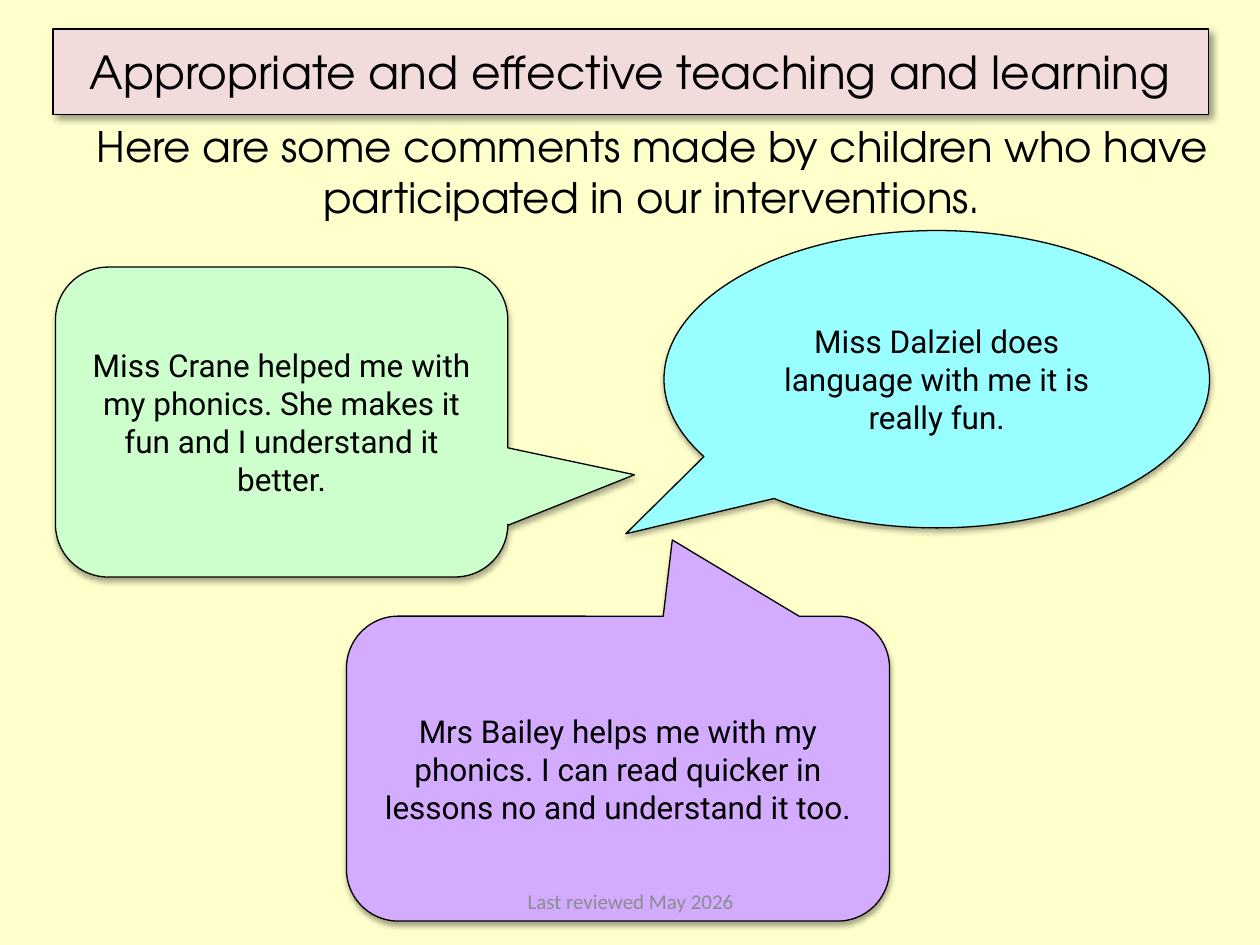
from lxml.etree import SubElement
from pptx import Presentation
from pptx.dml.color import RGBColor
from pptx.enum.shapes import MSO_SHAPE as Shape
from pptx.enum.text import MSO_ANCHOR as Anchor, MSO_AUTO_SIZE as AutoSize, PP_ALIGN as Align
from pptx.oxml.ns import qn
from pptx.util import Inches, Pt

COLORS = {
    "page": "FFFFCC", "title": "F2DCDB", "ink": "000000", "footer": "8C8C8C",
    "cyan": "98FEFF", "green": "CCFFCC", "purple": "D3ABFF",
}
HEADING_FONT = "TeX Gyre Adventor"
SPEECH_FONT = "Roboto"

# text, preset, position and size, adjustments, colour
COMMENTS = [
    ("Miss Dalziel does language with me it is really fun.",
     Shape.OVAL_CALLOUT, (5.27, 1.83, 4.33, 2.36), (-0.57, 0.52), "cyan"),
    ("Miss Crane helped me with my phonics. She makes it fun and I understand it better.",
     Shape.ROUNDED_RECTANGULAR_CALLOUT, (0.44, 2.12, 3.59, 2.46), (0.78, 0.17, 0.17), "green"),
    ("Mrs Bailey helps me with my phonics. I can read quicker in lessons no and understand it too.",
     Shape.ROUNDED_RECTANGULAR_CALLOUT, (2.75, 4.89, 4.31, 2.42), (0.1, -0.75, 0.17), "purple"),
]


def color(name):
    return RGBColor.from_string(COLORS[name])


def write(shape, text, size, font, ink="ink", anchor=Anchor.MIDDLE):
    frame = shape.text_frame
    frame.word_wrap = True
    frame.auto_size = AutoSize.NONE
    frame.vertical_anchor = anchor
    para = frame.paragraphs[0]
    para.alignment = Align.CENTER
    span = para.add_run()
    span.text = text
    span.font.size = Pt(size)
    span.font.name = font
    span.font.color.rgb = color(ink)


def add_shadow(shape, opacity, blur, distance, angle):
    effects = SubElement(shape.element.spPr, qn("a:effectLst"))
    shadow = SubElement(effects, qn("a:outerShdw"), blurRad=str(Pt(blur)),
                        dist=str(Pt(distance)), dir=str(angle * 60000), rotWithShape="0")
    tint = SubElement(shadow, qn("a:srgbClr"), val=COLORS["ink"])
    SubElement(tint, qn("a:alpha"), val=str(opacity * 1000))


def paint(shape, fill):
    shape.fill.solid()
    shape.fill.fore_color.rgb = color(fill)
    shape.line.color.rgb = color("ink")
    shape.line.width = Pt(0.75)


def add_title(page, text):
    title = page.shapes.title
    title.left, title.top = Inches(0.42), Inches(0.23)
    title.width, title.height = Inches(9.17), Inches(0.68)
    paint(title, "title")
    add_shadow(title, 40, 4, 3, 45)
    write(title, text, 26, HEADING_FONT)


def add_text(page, text, place, *style):
    box = page.shapes.add_textbox(*map(Inches, place))
    write(box, text, *style)


def add_comment(page, text, preset, place, adjustments, fill):
    bubble = page.shapes.add_shape(preset, *map(Inches, place))
    for index, value in enumerate(adjustments):
        bubble.adjustments[index] = value
    paint(bubble, fill)
    add_shadow(bubble, 35, 3.1, 1.8, 90)
    write(bubble, text, 18, SPEECH_FONT)


def main():
    deck = Presentation()
    deck.slide_width, deck.slide_height = Inches(10), Inches(7.5)
    page = deck.slides.add_slide(deck.slide_layouts[5])
    page.background.fill.solid()
    page.background.fill.fore_color.rgb = color("page")

    # Heading and introduction
    add_title(page, "Appropriate and effective teaching and learning")
    add_text(page, "Here are some comments made by children who have participated in our interventions.",
             (0.61, 0.91, 9.13, 0.91), 24, HEADING_FONT, "ink", Anchor.TOP)

    # Speech bubbles
    for comment in COMMENTS:
        add_comment(page, *comment)

    # Review date
    add_text(page, "Last reviewed May 2026", (3.42, 6.95, 3.17, 0.4), 12, "Calibri", "footer")

    deck.save("out.pptx")


if __name__ == "__main__":
    main()
